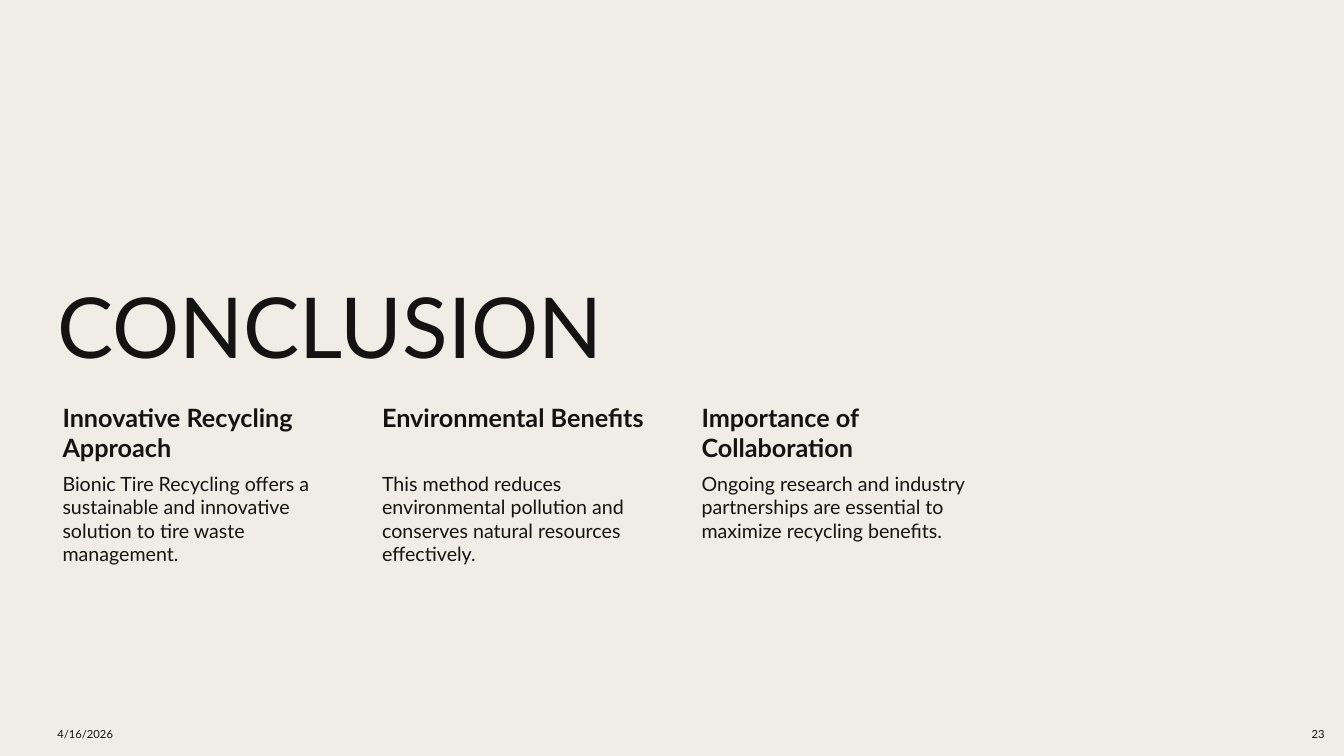
from pptx import Presentation
from pptx.dml.color import RGBColor
from pptx.enum.text import MSO_ANCHOR, MSO_AUTO_SIZE, PP_ALIGN
from pptx.util import Pt

TOP, MIDDLE, BOTTOM = MSO_ANCHOR.TOP, MSO_ANCHOR.MIDDLE, MSO_ANCHOR.BOTTOM
LEFT, RIGHT = PP_ALIGN.LEFT, PP_ALIGN.RIGHT
NO_AUTOFIT = MSO_AUTO_SIZE.NONE
TITLE_ONLY = 5

MARGIN = 33.84
COLUMN_WIDTH = 207.36
COLUMN_PITCH = 228.24
HEADING_TOP, HEADING_HEIGHT = 285.12, 49.68
BODY_TOP, BODY_HEIGHT = 335.52, 94.32
FOOTER_TOP, FOOTER_HEIGHT = 511.2, 26.64

# Insets: left, top, right, bottom
DEFAULT_INSETS = (7.2, 3.6, 7.2, 3.6)
HEADING_INSETS = (10.8, 2.16, 2.16, 2.16)
BODY_INSETS = (10.8, 1.44, 1.44, 1.44)

TAKEAWAYS = [
    ("Innovative Recycling Approach",
     "Bionic Tire Recycling offers a sustainable and innovative solution to tire waste management."),
    ("Environmental Benefits",
     "This method reduces environmental pollution and conserves natural resources effectively."),
    ("Importance of Collaboration",
     "Ongoing research and industry partnerships are essential to maximize recycling benefits."),
]


def color(hex_value):
    return RGBColor.from_string(hex_value)


def set_attributes(target, values):
    for name, value in values.items():
        setattr(target, name, value)


class SlideBuilder:
    """Holds the style and the current slide."""

    font_name = "Lato"
    ink = "131313"
    paper = "F0EDE6"

    def __init__(self, deck):
        self.page = deck.slides.add_slide(deck.slide_layouts[TITLE_ONLY])
        fill = self.page.background.fill
        fill.solid()
        fill.fore_color.rgb = color(self.paper)

    def fill_box(self, box, words, size, bold=False, anchor=TOP, align=LEFT,
                 insets=DEFAULT_INSETS, line_spacing=1.0):
        """Put one styled paragraph into a box."""
        left, top, right, bottom = map(Pt, insets)
        frame = box.text_frame
        frame.text = words
        para = frame.paragraphs[0]
        set_attributes(frame, {
            "word_wrap": True, "auto_size": NO_AUTOFIT, "vertical_anchor": anchor,
            "margin_left": left, "margin_top": top,
            "margin_right": right, "margin_bottom": bottom,
        })
        set_attributes(para, {
            "alignment": align, "line_spacing": line_spacing, "space_before": Pt(0),
        })
        font = para.runs[0].font
        set_attributes(font, {"name": self.font_name, "size": Pt(size), "bold": bold})
        font.color.rgb = color(self.ink)

    def title(self, words, left, top, width, height, size):
        box = self.page.shapes.title
        set_attributes(box, {
            "left": Pt(left), "top": Pt(top), "width": Pt(width), "height": Pt(height),
        })
        self.fill_box(box, words, size, anchor=BOTTOM, line_spacing=0.9)

    def text(self, words, left, top, width, height, size, **style):
        box = self.page.shapes.add_textbox(Pt(left), Pt(top), Pt(width), Pt(height))
        self.fill_box(box, words, size, **style)


def main():
    deck = Presentation()
    set_attributes(deck, {"slide_width": Pt(960), "slide_height": Pt(540)})
    builder = SlideBuilder(deck)

    builder.title("CONCLUSION", MARGIN, 128.16, 663.84, 144.72, 60)
    for index, (heading, body) in enumerate(TAKEAWAYS):
        left = MARGIN + index * COLUMN_PITCH
        builder.text(heading, left, HEADING_TOP, COLUMN_WIDTH, HEADING_HEIGHT, 18,
                     bold=True, insets=HEADING_INSETS)
        builder.text(body, left, BODY_TOP, COLUMN_WIDTH, BODY_HEIGHT, 14,
                     insets=BODY_INSETS)

    builder.text("4/16/2026", MARGIN, FOOTER_TOP, 223.92, FOOTER_HEIGHT, 8, anchor=MIDDLE)
    builder.text("23", 917.28, FOOTER_TOP, 36, FOOTER_HEIGHT, 8, anchor=MIDDLE, align=RIGHT)

    deck.save("out.pptx")


if __name__ == "__main__":
    main()
